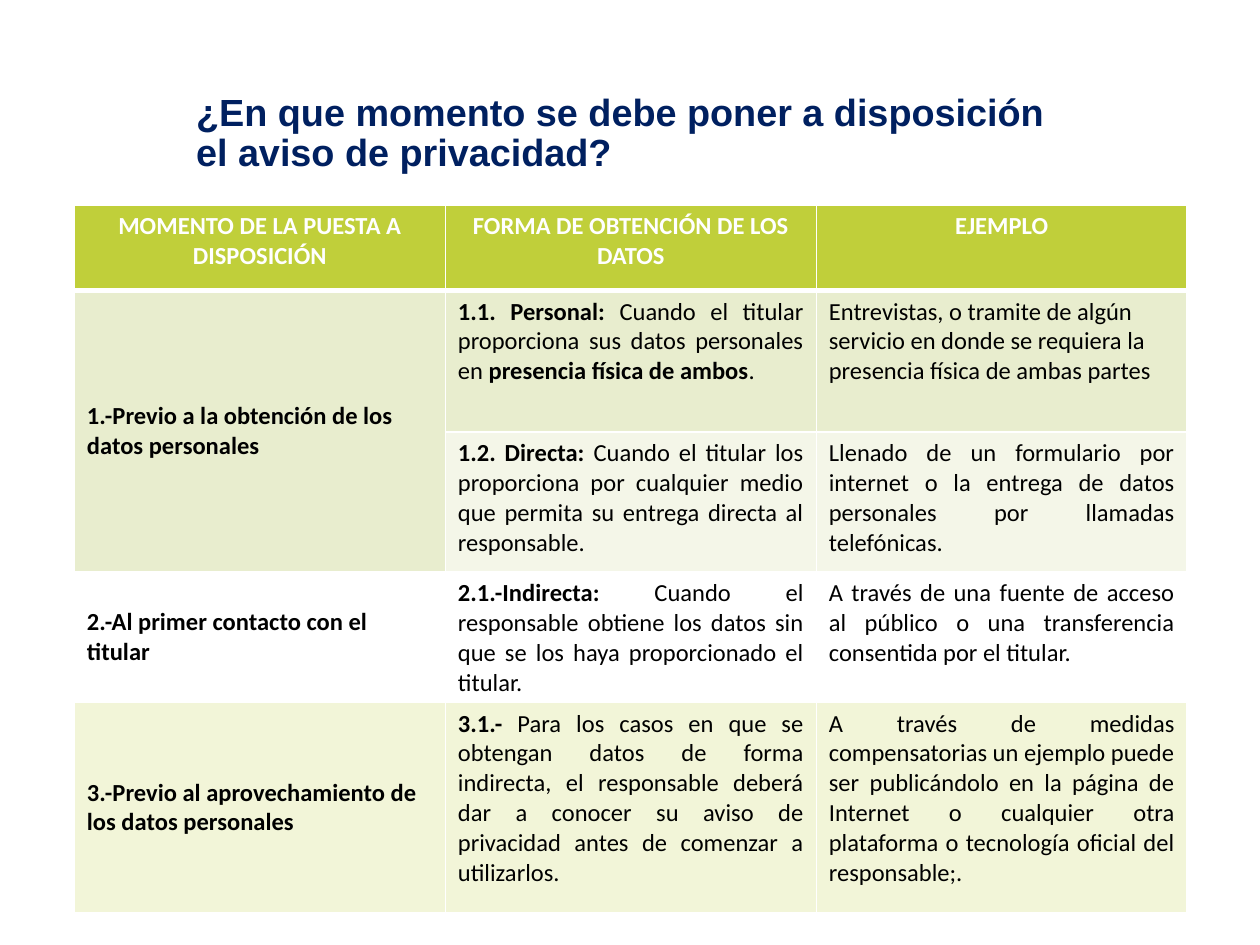
from lxml.etree import SubElement
from pptx import Presentation
from pptx.dml.color import RGBColor
from pptx.enum.text import MSO_ANCHOR, PP_ALIGN
from pptx.oxml.ns import qn
from pptx.util import Pt

COLORS = {
    "title": "002060", "header": "C0CF3A", "white": "FFFFFF", "text": "000000",
    "personal": "E8EDCE", "direct": "F4F6E8", "measures": "F2F5D8",
}
HEADERS = [
    "MOMENTO DE LA PUESTA A DISPOSICIÓN",
    "FORMA DE OBTENCIÓN DE LOS DATOS",
    "EJEMPLO",
]
ROWS = [
    ("personal", "1.-Previo a la obtención de los datos personales",
     [("1.1. Personal:", True),
      (" Cuando el titular proporciona sus datos personales en ", False),
      ("presencia física de ambos", True), (".", False)],
     "Entrevistas, o tramite de algún servicio en donde se requiera la "
     "presencia física de ambas partes", PP_ALIGN.LEFT),
    ("direct", "",
     [("1.2. Directa:", True),
      (" Cuando el titular los proporciona por cualquier medio que permita "
       "su entrega directa al responsable.", False)],
     "Llenado de un formulario por internet o la entrega de datos personales "
     "por llamadas telefónicas.", PP_ALIGN.JUSTIFY),
    ("white", "2.-Al primer contacto con el titular",
     [("2.1.-Indirecta:", True),
      (" Cuando el responsable obtiene los datos sin que se los haya "
       "proporcionado el titular.", False)],
     "A través de una fuente de acceso al público o una transferencia "
     "consentida por el titular.", PP_ALIGN.JUSTIFY),
    ("measures", "3.-Previo al aprovechamiento de los datos personales",
     [("3.1.-", True),
      (" Para los casos en que se obtengan datos de forma indirecta, el "
       "responsable deberá dar a conocer su aviso de privacidad antes de "
       "comenzar a utilizarlos.", False)],
     "A través de medidas compensatorias un ejemplo puede ser publicándolo "
     "en la página de Internet o cualquier otra plataforma o tecnología "
     "oficial del responsable;.", PP_ALIGN.JUSTIFY),
]
COLUMN_WIDTH = 212
ROW_HEIGHTS = [49, 81, 80, 74, 120]


class SlideBuilder:
    """Holds the style and the current slide, and adds each kind of element."""

    def __init__(self, slide):
        self.slide = slide
        self.title_font, self.title_size = "Arial", 21.6
        self.table_font, self.table_size = "Calibri", 14

    def add_runs(self, paragraph, runs, font, size, color):
        for text, bold in runs:
            run = paragraph.add_run()
            run.text = text
            run.font.name = font
            run.font.size = Pt(size)
            run.font.bold = bold
            run.font.color.rgb = RGBColor.from_string(COLORS[color])

    def title(self, text, left, top, width, height):
        shape = self.slide.shapes.add_textbox(Pt(left), Pt(top), Pt(width), Pt(height))
        text_frame = shape.text_frame
        text_frame.word_wrap = True
        text_frame.vertical_anchor = MSO_ANCHOR.MIDDLE
        paragraph = text_frame.paragraphs[0]
        paragraph.line_spacing = 0.9
        self.add_runs(paragraph, [(text, True)], self.title_font, self.title_size, "title")

    def table(self, left, top, column_width, row_heights, column_count):
        frame = self.slide.shapes.add_table(
            len(row_heights), column_count, Pt(left), Pt(top),
            Pt(column_width * column_count), Pt(sum(row_heights)))
        for row, height in zip(frame.table.rows, row_heights):
            row.height = Pt(height)
        return frame.table

    def borders(self, cell, top, bottom):
        properties = cell._tc.get_or_add_tcPr()
        for side, width in (("L", 1), ("R", 1), ("T", top), ("B", bottom)):
            line = SubElement(properties, qn(f"a:ln{side}"), w=str(Pt(width)))
            fill = SubElement(line, qn("a:solidFill"))
            SubElement(fill, qn("a:srgbClr"), val=COLORS["white"])

    def cell(self, cell, runs, fill, color="text", align=PP_ALIGN.LEFT,
             anchor=MSO_ANCHOR.TOP, top=1, bottom=1):
        self.borders(cell, top, bottom)
        cell.fill.solid()
        cell.fill.fore_color.rgb = RGBColor.from_string(COLORS[fill])
        cell.vertical_anchor = anchor
        paragraph = cell.text_frame.paragraphs[0]
        paragraph.alignment = align
        self.add_runs(paragraph, runs, self.table_font, self.table_size, color)


def main():
    presentation = Presentation()
    presentation.slide_width, presentation.slide_height = Pt(720), Pt(540)
    builder = SlideBuilder(presentation.slides.add_slide(presentation.slide_layouts[6]))

    builder.title("¿En que momento se debe poner a disposición el aviso de privacidad?",
                  105, 49, 521, 55.5)
    table = builder.table(42.5, 117, COLUMN_WIDTH, ROW_HEIGHTS, len(HEADERS))
    for column, header in enumerate(HEADERS):
        builder.cell(table.cell(0, column), [(header, True)], "header", "white",
                     PP_ALIGN.CENTER, bottom=3)
    for row, (fill, moment, form, example, align) in enumerate(ROWS, start=1):
        top = 3 if row == 1 else 1
        moment_runs = [(moment, True)] if moment else []
        builder.cell(table.cell(row, 0), moment_runs, fill,
                     anchor=MSO_ANCHOR.MIDDLE, top=top)
        builder.cell(table.cell(row, 1), form, fill, align=PP_ALIGN.JUSTIFY, top=top)
        builder.cell(table.cell(row, 2), [(example, False)], fill, align=align, top=top)
    table.cell(1, 0).merge(table.cell(2, 0))

    presentation.save("out.pptx")


if __name__ == "__main__":
    main()
